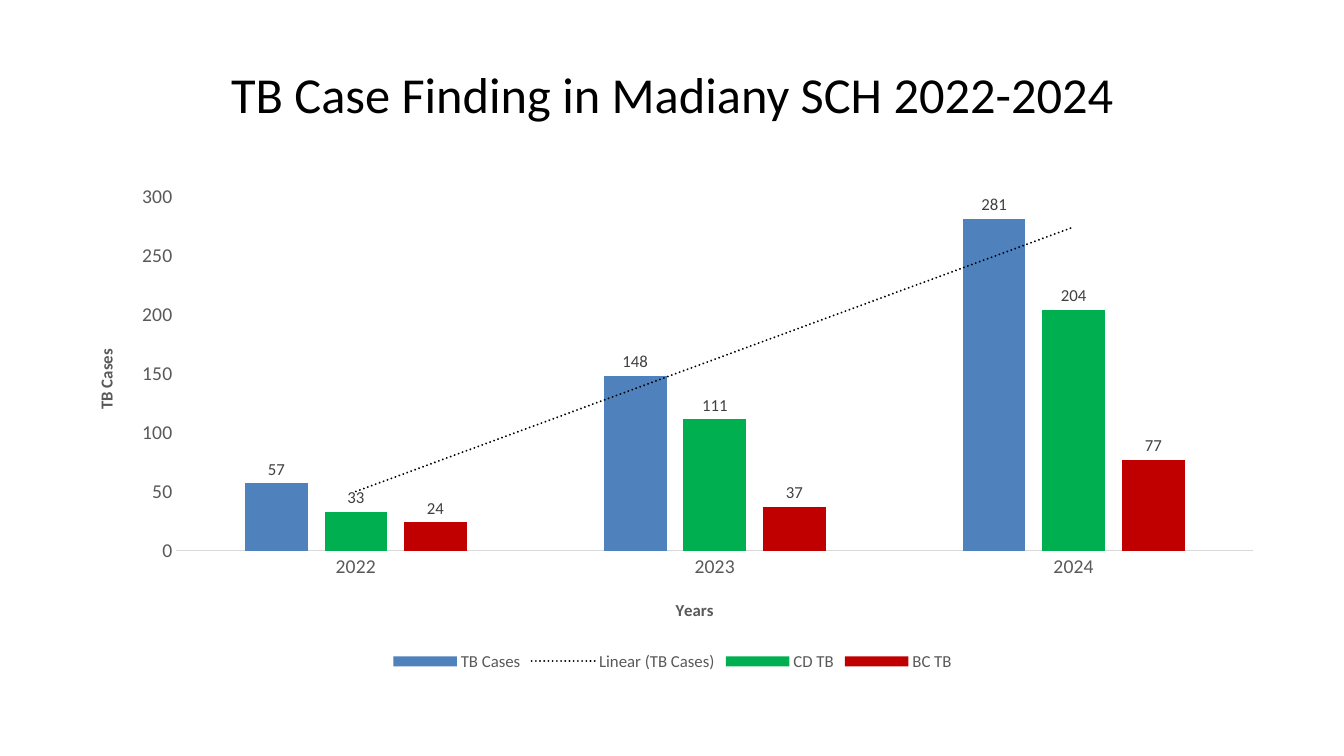
from lxml import etree
from pptx import Presentation
from pptx.chart.data import CategoryChartData
from pptx.dml.color import RGBColor
from pptx.enum.chart import XL_CHART_TYPE, XL_LABEL_POSITION, XL_LEGEND_POSITION, XL_TICK_MARK
from pptx.enum.text import MSO_ANCHOR, PP_ALIGN
from pptx.oxml import parse_xml
from pptx.oxml.ns import qn
from pptx.util import Inches, Pt

COLUMN = XL_CHART_TYPE.COLUMN_CLUSTERED
OUTSIDE = XL_LABEL_POSITION.OUTSIDE_END
BOTTOM = XL_LEGEND_POSITION.BOTTOM
NO_TICK = XL_TICK_MARK.NONE
MIDDLE = MSO_ANCHOR.MIDDLE
CENTER = PP_ALIGN.CENTER
CHART_NS = "http://schemas.openxmlformats.org/drawingml/2006/chart"
DRAW_NS = "http://schemas.openxmlformats.org/drawingml/2006/main"


def style(font, size, color, bold=False):
    font.name = "Calibri"
    font.size = Pt(size)
    font.bold = bold
    font.color.rgb = RGBColor.from_string(color)


def place(parent, index, **values):
    for old in parent.findall(qn("c:layout")):
        parent.remove(old)
    layout = etree.Element(qn("c:layout"))
    manual = etree.SubElement(layout, qn("c:manualLayout"))
    for key, value in values.items():
        etree.SubElement(manual, qn("c:" + key)).set("val", str(value))
    parent.insert(index, layout)


prs = Presentation()
prs.slide_width = Inches(13.33)
prs.slide_height = Inches(7.5)
slide = prs.slides.add_slide(prs.slide_layouts[6])

title = slide.shapes.add_textbox(Inches(0.67), Inches(0.3), Inches(12), Inches(1.25))
frame = title.text_frame
frame.word_wrap = True
frame.vertical_anchor = MIDDLE
frame.text = "TB Case Finding in Madiany SCH 2022-2024"
frame.paragraphs[0].alignment = CENTER
style(frame.paragraphs[0].runs[0].font, 36, "000000")

groups = [
    ("TB Cases", (57, 148, 281), "4F81BD"),
    ("CD TB", (33, 111, 204), "00B050"),
    ("BC TB", (24, 37, 77), "C00000"),
]
data = CategoryChartData()
data.categories = ["2022", "2023", "2024"]
for name, counts, color in groups:
    data.add_series(name, counts)
chart = slide.shapes.add_chart(
    COLUMN, Inches(0.67), Inches(1.75), Inches(12), Inches(4.95), data
).chart
style(chart.font, 10, "000000")
chart.has_title = False
chart.has_legend = True
chart.legend.position = BOTTOM
chart.legend.include_in_layout = False
style(chart.legend.font, 12, "595959")

plot = chart.plots[0]
plot.gap_width = 219
plot.overlap = -27
plot.vary_by_categories = False
for series, (name, counts, color) in zip(plot.series, groups):
    series.format.fill.solid()
    series.format.fill.fore_color.rgb = RGBColor.from_string(color)
    series.invert_if_negative = False
    labels = series.data_labels
    labels.show_value = True
    labels.position = OUTSIDE
    style(labels.font, 12, "404040")

trend = parse_xml(
    f'<c:trendline xmlns:c="{CHART_NS}" xmlns:a="{DRAW_NS}">'
    '<c:spPr><a:ln w="19050" cap="rnd"><a:solidFill><a:srgbClr val="000000"/></a:solidFill>'
    '<a:prstDash val="sysDot"/></a:ln></c:spPr>'
    '<c:trendlineType val="linear"/><c:dispRSqr val="0"/><c:dispEq val="0"/></c:trendline>'
)
cases = plot.series[0]._element
cases.find(qn("c:cat")).addprevious(trend)

years, scale = chart.category_axis, chart.value_axis
for axis, text, left, top in ((years, "Years", 0.5, 0.84), (scale, "TB Cases", 0.02, 0.34)):
    axis.has_major_gridlines = False
    axis.major_tick_mark = NO_TICK
    axis.minor_tick_mark = NO_TICK
    style(axis.tick_labels.font, 14, "595959")
    caption = axis.axis_title
    caption.text_frame.text = text
    style(caption.text_frame.paragraphs[0].runs[0].font, 12, "595959", True)
    place(caption._element, 1, xMode="edge", yMode="edge", x=left, y=top)
years.format.line.color.rgb = RGBColor.from_string("D9D9D9")
years.format.line.width = Pt(0.75)
scale.format.line.fill.background()
scale.minimum_scale = 0
scale.maximum_scale = 300
scale.major_unit = 50
turn = scale.axis_title.text_frame._txBody.find(qn("a:bodyPr"))
turn.set("rot", "-5400000")
turn.set("vert", "horz")

area = chart._chartSpace.chart.plotArea
place(area, 0, layoutTarget="inner", xMode="edge", yMode="edge", x=0.09, y=0.04, w=0.89, h=0.71)

prs.save("out.pptx")
